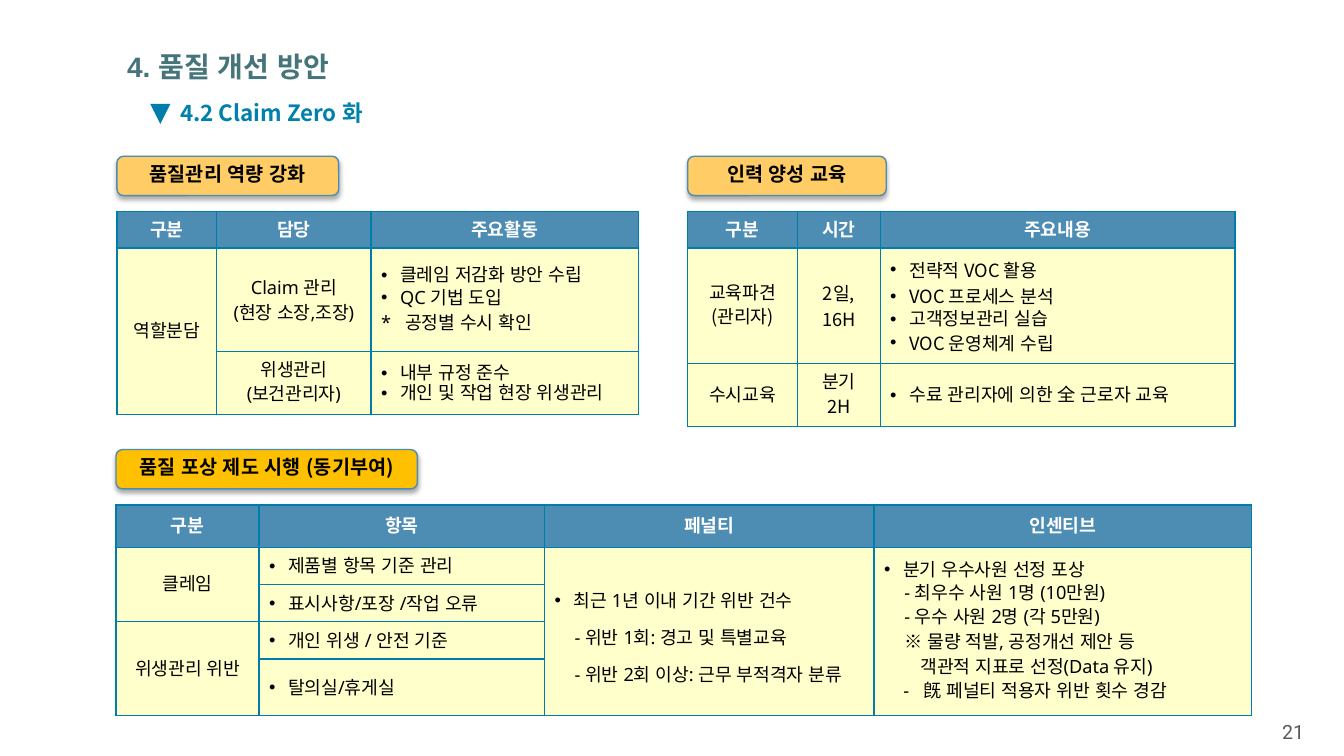
from dataclasses import dataclass
from typing import Any

from lxml.etree import SubElement
from pptx import Presentation
from pptx.dml.color import RGBColor
from pptx.enum.shapes import MSO_SHAPE
from pptx.enum.text import MSO_ANCHOR, PP_ALIGN
from pptx.oxml.ns import qn
from pptx.util import Inches, Pt

BLACK = RGBColor(0x00, 0x00, 0x00)
WHITE = RGBColor(0xFF, 0xFF, 0xFF)
GREY = RGBColor(0x59, 0x59, 0x59)
TEAL = RGBColor(0x45, 0x74, 0x7A)
BLUE = RGBColor(0x00, 0x81, 0xAB)
BORDER = RGBColor(0x00, 0x7D, 0xA9)
HEADER = RGBColor(0x4D, 0x8C, 0xB3)
CREAM = RGBColor(0xFF, 0xFF, 0xCC)
ORANGE = RGBColor(0xFF, 0xCC, 0x66)
AMBER = RGBColor(0xFF, 0xC0, 0x00)
SANS, CJK, ARIAL = "Noto Sans", "Noto Sans CJK KR", "Arial"


@dataclass(frozen=True)
class Para:
    text: str
    margin: float = 0
    indent: float = 0
    bullet: bool = False
    align: PP_ALIGN = PP_ALIGN.LEFT


@dataclass(frozen=True)
class Cell:
    row: int
    col: int
    paras: list[Para]
    rows: int = 1
    spacing: float = 1.0


@dataclass(frozen=True)
class Grid:
    left: float
    top: float
    font: str
    widths: list[float]
    heights: list[float]
    headers: list[str]
    cells: list[Cell]


@dataclass(frozen=True)
class Badge:
    text: str
    left: float
    top: float
    width: float
    fill: RGBColor


def centred(*lines: str) -> list[Para]:
    return [Para(t, align=PP_ALIGN.CENTER) for t in lines]


def bullets(*lines: str) -> list[Para]:
    return [Para(t, 0.19, -0.19, True) for t in lines]


def indented(*lines: str) -> list[Para]:
    return [Para(t, indent=0.2) for t in lines]


BADGES = [
    Badge("품질관리 역량 강화", 1.16, 1.55, 2.2, ORANGE),
    Badge("인력 양성 교육", 6.82, 1.55, 1.97, ORANGE),
    Badge("품질 포상 제도 시행 (동기부여)", 1.15, 4.46, 2.99, AMBER),
]

GRIDS = [
    Grid(1.16, 2.1, SANS, [0.99, 1.53, 2.65], [0.36, 1.03, 0.62],
         ["구분", "담당", "주요활동"], [
        Cell(1, 0, centred("역할분담"), rows=2),
        Cell(1, 1, centred("Claim 관리", "(현장 소장,조장)")),
        Cell(1, 2, bullets("클레임 저감화 방안 수립", "QC 기법 도입")
             + [Para("*\t공정별 수시 확인", 0.24, -0.24)]),
        Cell(2, 1, centred("위생관리", "(보건관리자)")),
        Cell(2, 2, bullets("내부 규정 준수", "개인 및 작업 현장 위생관리")),
    ]),
    Grid(6.82, 2.1, CJK, [1.09, 0.82, 3.52], [0.36, 1.15, 0.62],
         ["구분", "시간", "주요내용"], [
        Cell(1, 0, centred("교육파견", "(관리자)")),
        Cell(1, 1, centred("2일,", "16H")),
        Cell(1, 2, bullets("전략적 VOC 활용", "VOC 프로세스 분석",
                           "고객정보관리 실습", "VOC 운영체계 수립")),
        Cell(2, 0, centred("수시교육")),
        Cell(2, 1, centred("분기", "2H")),
        Cell(2, 2, bullets("수료 관리자에 의한 全 근로자 교육")),
    ]),
    Grid(1.15, 5.01, SANS, [1.42, 2.83, 3.27, 3.74], [0.42] + [0.37] * 3 + [0.56],
         ["구분", "항목", "페널티", "인센티브"], [
        Cell(1, 0, centred("클레임"), rows=2),
        Cell(3, 0, centred("위생관리 위반"), rows=2),
        Cell(1, 1, bullets("제품별 항목 기준 관리")),
        Cell(2, 1, bullets("표시사항/포장 /작업 오류")),
        Cell(3, 1, bullets("개인 위생 / 안전 기준")),
        Cell(4, 1, bullets("탈의실/휴게실")),
        Cell(1, 2, bullets("최근 1년 이내 기간 위반 건수")
             + indented("- 위반 1회: 경고 및 특별교육", "- 위반 2회 이상: 근무 부적격자 분류"),
             rows=4, spacing=1.5),
        Cell(1, 3, bullets("분기 우수사원 선정 포상")
             + indented("- 최우수 사원 1명 (10만원)", "- 우수 사원 2명 (각 5만원)",
                        "※ 물량 적발, 공정개선 제안 등")
             + [Para("객관적 지표로 선정(Data 유지)", indent=0.36),
                Para("-\t旣 페널티 적용자 위반 횟수 경감", 0.39, -0.2)], rows=4),
    ]),
]


def box(left: float, top: float, width: float, height: float) -> tuple:
    return tuple(Inches(v) for v in (left, top, width, height))


def add_run(p: Any, text: str, color: RGBColor, **fmt: Any) -> None:
    r = p.add_run()
    r.text = text
    for key, value in fmt.items():
        setattr(r.font, key, value)
    r.font.color.rgb = color
    SubElement(r.font._element, qn("a:ea"), typeface=ARIAL)


def fill_cell(cell: Any, paras: list[Para], spacing: float, color: RGBColor, **fmt: Any) -> None:
    cell.vertical_anchor = MSO_ANCHOR.MIDDLE
    tf = cell.text_frame
    for i, para in enumerate(paras):
        p = tf.add_paragraph() if i else tf.paragraphs[0]
        p.alignment, p.line_spacing = para.align, spacing
        pPr = p._p.get_or_add_pPr()
        pPr.set("marL", str(Inches(para.margin)))
        pPr.set("indent", str(Inches(para.indent)))
        if para.bullet:
            SubElement(pPr, qn("a:buFont"), typeface=ARIAL)
            SubElement(pPr, qn("a:buChar"), char="•")
        add_run(p, para.text, color, size=Pt(13), **fmt)


def style_cell(cell: Any, fill: RGBColor) -> None:
    tcPr = cell._tc.get_or_add_tcPr()
    for side in ("lnL", "lnR", "lnT", "lnB"):
        ln = SubElement(tcPr, qn(f"a:{side}"), w=str(Pt(1)))
        SubElement(SubElement(ln, qn("a:solidFill")), qn("a:srgbClr"), val=str(BORDER))
    cell.fill.solid()
    cell.fill.fore_color.rgb = fill


def add_grid(shapes: Any, grid: Grid) -> None:
    size = box(grid.left, grid.top, sum(grid.widths), sum(grid.heights))
    table = shapes.add_table(len(grid.heights), len(grid.widths), *size).table
    for column, width in zip(table.columns, grid.widths):
        column.width = Inches(width)
    for i, (row, height) in enumerate(zip(table.rows, grid.heights)):
        row.height = Inches(height)
        for cell in row.cells:
            style_cell(cell, CREAM if i else HEADER)
    for col, text in enumerate(grid.headers):
        fill_cell(table.cell(0, col), centred(text), 1.0, WHITE, name=grid.font, bold=True)
    for c in grid.cells:
        cell = table.cell(c.row, c.col)
        if c.rows > 1:
            cell.merge(table.cell(c.row + c.rows - 1, c.col))
        fill_cell(cell, c.paras, c.spacing, BLACK, name=grid.font, bold=False)


def add_badge(shapes: Any, badge: Badge) -> None:
    sp = shapes.add_shape(MSO_SHAPE.ROUNDED_RECTANGLE,
                          *box(badge.left, badge.top, badge.width, 0.39))
    sp.fill.solid()
    sp.fill.fore_color.rgb = badge.fill
    sp.line.color.rgb = HEADER
    sp.line.width = Pt(1)
    effects = SubElement(sp._element.spPr, qn("a:effectLst"))
    shadow = SubElement(effects, qn("a:outerShdw"), blurRad=str(Pt(3.5)), dist=str(Pt(2.2)),
                        dir="5400000", rotWithShape="0")
    SubElement(SubElement(shadow, qn("a:srgbClr"), val=str(BLACK)), qn("a:alpha"), val="32000")
    tf = sp.text_frame
    tf.vertical_anchor = MSO_ANCHOR.MIDDLE
    p = tf.paragraphs[0]
    p.alignment, p.line_spacing = PP_ALIGN.CENTER, Pt(13)
    add_run(p, badge.text, BLACK, name=CJK, size=Pt(14), bold=True)


def add_label(shapes: Any, place: tuple, text: str, align: PP_ALIGN, color: RGBColor,
              **fmt: Any) -> None:
    tf = shapes.add_textbox(*place).text_frame
    tf.word_wrap = True
    tf.paragraphs[0].alignment = align
    add_run(tf.paragraphs[0], text, color, **fmt)


def add_title(title: Any, text: str) -> None:
    title.left, title.top, title.width, title.height = box(1.16, 0.46, 11.35, 0.44)
    tf = title.text_frame
    tf.vertical_anchor = MSO_ANCHOR.MIDDLE
    p = tf.paragraphs[0]
    p.alignment, p.line_spacing = PP_ALIGN.LEFT, 0.9
    add_run(p, text, TEAL, name=ARIAL, size=Pt(20), bold=True)


def add_subtitle(shapes: Any, text: str) -> None:
    group = shapes.add_group_shape().shapes
    marker = group.add_shape(MSO_SHAPE.ISOSCELES_TRIANGLE, *box(1.49, 1.03, 0.2, 0.2))
    marker.rotation = 180
    marker.shadow.inherit = False
    marker.fill.solid()
    marker.fill.fore_color.rgb = BORDER
    marker.line.fill.background()
    add_label(group, box(1.69, 0.93, 8.74, 0.37), text, PP_ALIGN.LEFT, BLUE,
              name=CJK, size=Pt(16), bold=True)


def main() -> None:
    prs = Presentation()
    prs.slide_width, prs.slide_height = Inches(13.33), Inches(7.5)
    s = prs.slides.add_slide(prs.slide_layouts[5])
    add_title(s.shapes.title, "4. 품질 개선 방안")
    add_subtitle(s.shapes, "4.2 Claim Zero 화")
    for badge in BADGES:
        add_badge(s.shapes, badge)
    for grid in GRIDS:
        add_grid(s.shapes, grid)
    add_label(s.shapes, box(12.52, 7.09, 0.61, 0.34), "21", PP_ALIGN.CENTER, GREY,
              name="Roboto", size=Pt(14))
    prs.save("out.pptx")


if __name__ == "__main__":
    main()
